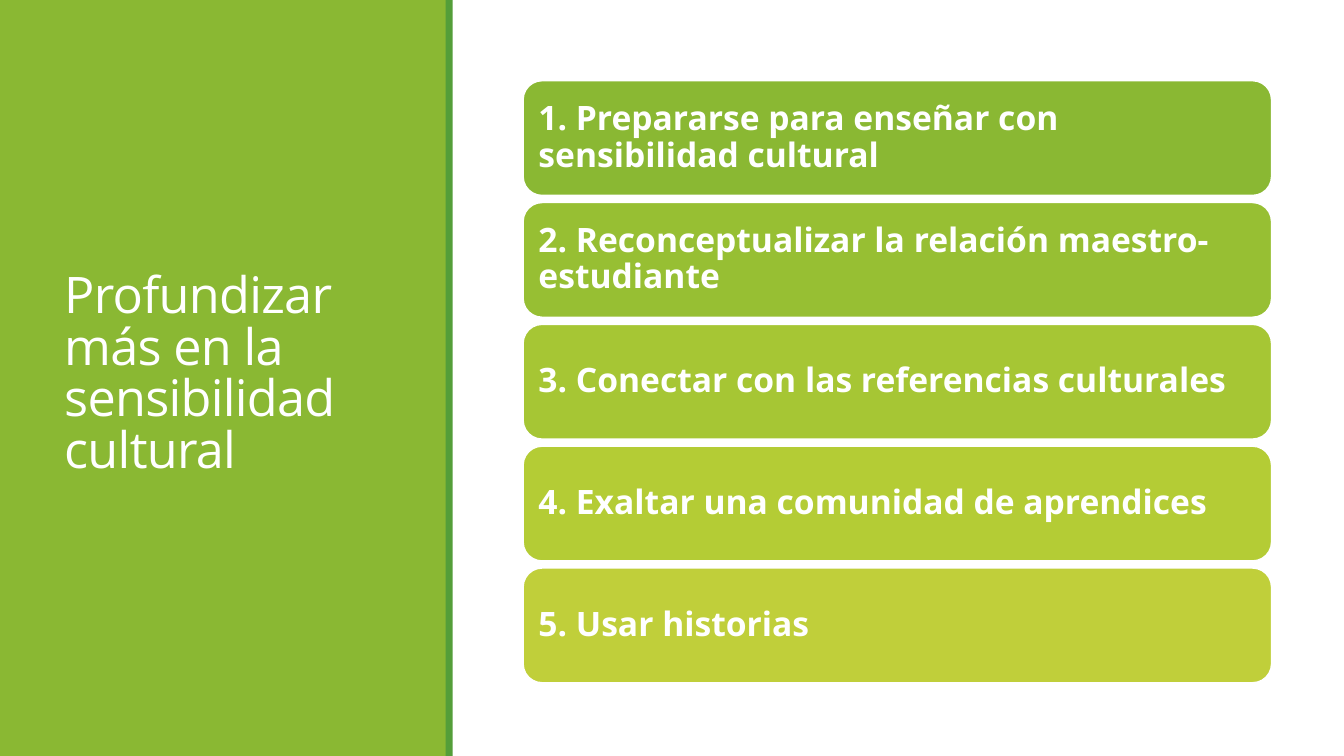
from dataclasses import dataclass

from pptx import Presentation
from pptx.dml.color import RGBColor as Color
from pptx.enum.shapes import MSO_SHAPE as Shape
from pptx.enum.text import MSO_ANCHOR as Anchor, PP_ALIGN as Align
from pptx.util import Cm, Pt


@dataclass(frozen=True)
class Theme:
    font: str = "Open Sans"
    white: str = "FFFFFF"
    panel: str = "8AB833"
    stripe: str = "549E39"
    cards: tuple = ("8AB833", "97BF33", "A6C634", "B4CC35", "C0CF3A")
    title_size: float = 36
    card_size: float = 24
    outline: float = 1.25


def write(frame, text, *, font, size, color, bold=False, line_spacing=1.0, tracking=0):
    frame.word_wrap = True
    frame.vertical_anchor = Anchor.MIDDLE
    para = frame.paragraphs[0]
    para.alignment = Align.LEFT
    para.line_spacing = line_spacing
    span = para.add_run()
    span.text = text
    span.font.name = font
    span.font.size = Pt(size)
    span.font.bold = bold
    span.font.color.rgb = Color.from_string(color)
    if tracking:
        span._r.get_or_add_rPr().set("spc", str(round(tracking * 100)))


class PageBuilder:
    def __init__(self, page, theme):
        self.page = page
        self.theme = theme

    def block(self, left, top, width, height, fill, kind=Shape.RECTANGLE):
        box = self.page.shapes.add_shape(kind, Cm(left), Cm(top), Cm(width), Cm(height))
        box.shadow.inherit = False
        box.fill.solid()
        box.fill.fore_color.rgb = Color.from_string(fill)
        box.line.fill.background()
        return box

    def title(self, left, top, width, height, text):
        box = self.page.shapes.add_textbox(Cm(left), Cm(top), Cm(width), Cm(height))
        write(box.text_frame, text, font=self.theme.font, size=self.theme.title_size,
              color=self.theme.white, line_spacing=0.85, tracking=-0.5)

    def card(self, left, top, width, height, fill, text):
        box = self.block(left, top, width, height, fill, Shape.ROUNDED_RECTANGLE)
        box.line.color.rgb = Color.from_string(self.theme.white)
        box.line.width = Pt(self.theme.outline)
        frame = box.text_frame
        frame.margin_left = frame.margin_right = Cm(0.25)
        frame.margin_top = frame.margin_bottom = Cm(0.25)
        write(frame, text, font=self.theme.font, size=self.theme.card_size,
              color=self.theme.white, bold=True, line_spacing=0.9)


def main():
    page_width, page_height = 33.87, 19.05
    card_top, card_height, card_pitch = 2.03, 2.9, 3.07
    steps = (
        "Prepararse para enseñar con sensibilidad cultural",
        "Reconceptualizar la relación maestro-estudiante",
        "Conectar con las referencias culturales",
        "Exaltar una comunidad de aprendices",
        "Usar historias",
    )

    deck = Presentation()
    deck.slide_width, deck.slide_height = Cm(page_width), Cm(page_height)
    theme = Theme()
    builder = PageBuilder(deck.slides.add_slide(deck.slide_layouts[6]), theme)

    builder.block(0, 0, 11.25, page_height, theme.panel)
    builder.title(1.37, 1.45, 8.56, 16.03, "Profundizar más en la sensibilidad cultural")
    builder.block(11.23, 0, 0.18, page_height, theme.stripe)
    for index, (step, fill) in enumerate(zip(steps, theme.cards)):
        builder.card(13.18, card_top + index * card_pitch, 18.87, card_height,
                     fill, f"{index + 1}. {step}")

    deck.save("out.pptx")


if __name__ == "__main__":
    main()
